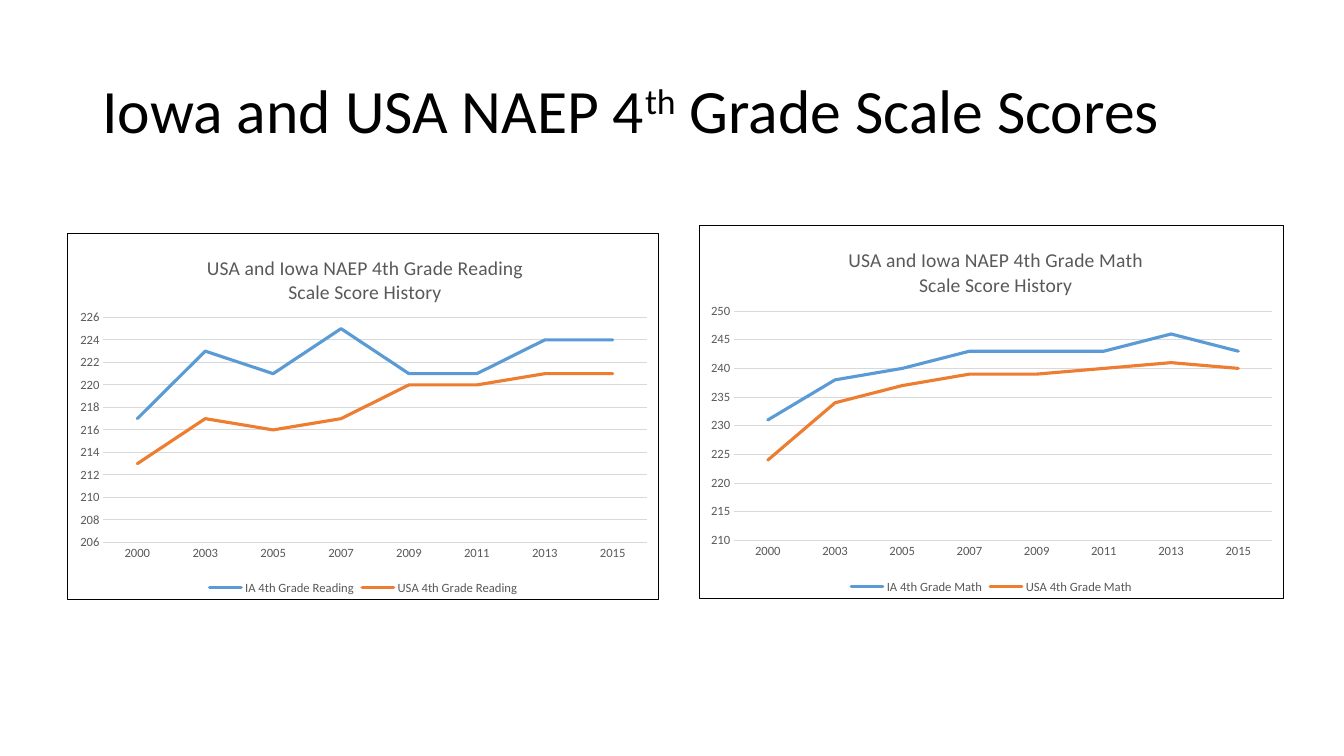
from lxml.etree import SubElement
from pptx import Presentation
from pptx.chart.data import CategoryChartData
from pptx.dml.color import RGBColor
from pptx.enum.chart import XL_CHART_TYPE, XL_LEGEND_POSITION, XL_TICK_MARK
from pptx.enum.text import MSO_ANCHOR, PP_ALIGN
from pptx.oxml import parse_xml
from pptx.oxml.ns import nsdecls, qn
from pptx.util import Pt

FONT = "Calibri"
GREY, PALE, BLACK = "595959", "D9D9D9", "000000"
YEARS = ["2000", "2003", "2005", "2007", "2009", "2011", "2013", "2015"]
COLORS = ["5B9BD5", "ED7D31"]


def color(code):
    """Turn a hex string into a colour."""
    return RGBColor.from_string(code)


def style(font, size, code):
    """Set face, size and colour of a font."""
    font.name, font.size, font.bold = FONT, Pt(size), False
    font.color.rgb = color(code)


def write(para, text, size=14, code=GREY, raised=False):
    """Add one formatted run to a paragraph."""
    run = para.add_run()
    run.text = text
    style(run.font, size, code)
    if raised:
        run.font._element.set("baseline", "30000")


def stroke(line, code, width=0.75):
    """Give a line its colour and width."""
    line.color.rgb = color(code)
    line.width = Pt(width)


def place(parent, index, **values):
    """Set the manual layout of a chart part."""
    for old in parent.findall(qn("c:layout")):
        parent.remove(old)
    layout = parse_xml(f"<c:layout {nsdecls('c')}/>")
    manual = SubElement(layout, qn("c:manualLayout"))
    for name, value in values.items():
        SubElement(manual, qn(f"c:{name}")).set("val", str(value))
    parent.insert(index, layout)


def add_border(space):
    """Draw a white ground and a black frame on a chart."""
    space.find(qn("c:chart")).addnext(parse_xml(
        f'<c:spPr {nsdecls("c", "a")}>'
        '<a:solidFill><a:srgbClr val="FFFFFF"/></a:solidFill>'
        f'<a:ln w="{Pt(0.75)}"><a:solidFill><a:srgbClr val="{BLACK}"/>'
        '</a:solidFill></a:ln></c:spPr>'))


def add_heading(chart, subject, left):
    """Write the two title lines of a chart."""
    frame = chart.chart_title.text_frame
    write(frame.paragraphs[0], f"USA and Iowa NAEP 4th Grade {subject}")
    write(frame.add_paragraph(), "Scale Score History")
    title = chart._chartSpace.find(".//" + qn("c:title"))
    place(title, 1, xMode="edge", yMode="edge", x=left, y=0.05)


def format_axes(chart, low, high, step):
    """Format both axes and the grid."""
    years, scores = chart.category_axis, chart.value_axis
    for axis in (years, scores):
        axis.major_tick_mark = axis.minor_tick_mark = XL_TICK_MARK.NONE
        style(axis.tick_labels.font, 9, GREY)
    stroke(years.format.line, PALE)
    scores.format.line.fill.background()
    stroke(scores.major_gridlines.format.line, PALE)
    scores.minimum_scale, scores.maximum_scale = low, high
    scores.major_unit = step
    scores.tick_labels.number_format = "0"
    scores.tick_labels.number_format_is_linked = False


def add_scores(slide, subject, box, iowa, nation, scale, left):
    """Add the line chart of one subject."""
    data = CategoryChartData(number_format="0")
    data.categories = YEARS
    data.add_series(f"IA 4th Grade {subject}", iowa)
    data.add_series(f"USA 4th Grade {subject}", nation)
    chart = slide.shapes.add_chart(
        XL_CHART_TYPE.LINE, *map(Pt, box), data).chart
    style(chart.font, 10, BLACK)
    add_heading(chart, subject, left)
    format_axes(chart, *scale)
    for series, code in zip(chart.plots[0].series, COLORS):
        series.smooth = False
        stroke(series.format.line, code, 2.25)
    chart.plots[0].vary_by_categories = False
    chart.has_legend = True
    chart.legend.position = XL_LEGEND_POSITION.BOTTOM
    chart.legend.include_in_layout = False
    style(chart.legend.font, 9, GREY)
    space = chart._chartSpace
    for line in space.xpath(".//c:ser/c:spPr/a:ln"):
        line.set("cap", "rnd")
    place(space.find(".//" + qn("c:plotArea")), 0, layoutTarget="inner",
          xMode="edge", yMode="edge", x=0.06, y=0.23, w=0.92, h=0.615)
    add_border(space)


def add_title(slide):
    """Fill the title placeholder."""
    title = slide.shapes.title
    title.left, title.top = Pt(66), Pt(28.8)
    title.width, title.height = Pt(828), Pt(104.4)
    frame = title.text_frame
    frame.vertical_anchor = MSO_ANCHOR.MIDDLE
    para = frame.paragraphs[0]
    para.alignment, para.line_spacing = PP_ALIGN.LEFT, 0.9
    write(para, "Iowa and USA NAEP 4", size=44, code=BLACK)
    write(para, "th", size=44, code=BLACK, raised=True)
    write(para, " Grade Scale Scores", size=44, code=BLACK)


def main():
    """Build and save the slide."""
    deck = Presentation()
    deck.slide_width, deck.slide_height = Pt(960), Pt(540)
    slide = deck.slides.add_slide(deck.slide_layouts[5])
    add_title(slide)
    add_scores(slide, "Reading", (48.2, 166.3, 422.6, 262.1),
               [217, 223, 221, 225, 221, 221, 224, 224],
               [213, 217, 216, 217, 220, 220, 221, 221],
               (206, 226, 2), 0.23)
    add_scores(slide, "Math", (499, 160.6, 418.3, 267.1),
               [231, 238, 240, 243, 243, 243, 246, 243],
               [224, 234, 237, 239, 239, 240, 241, 240],
               (210, 250, 5), 0.25)
    deck.save("out.pptx")


if __name__ == "__main__":
    main()
